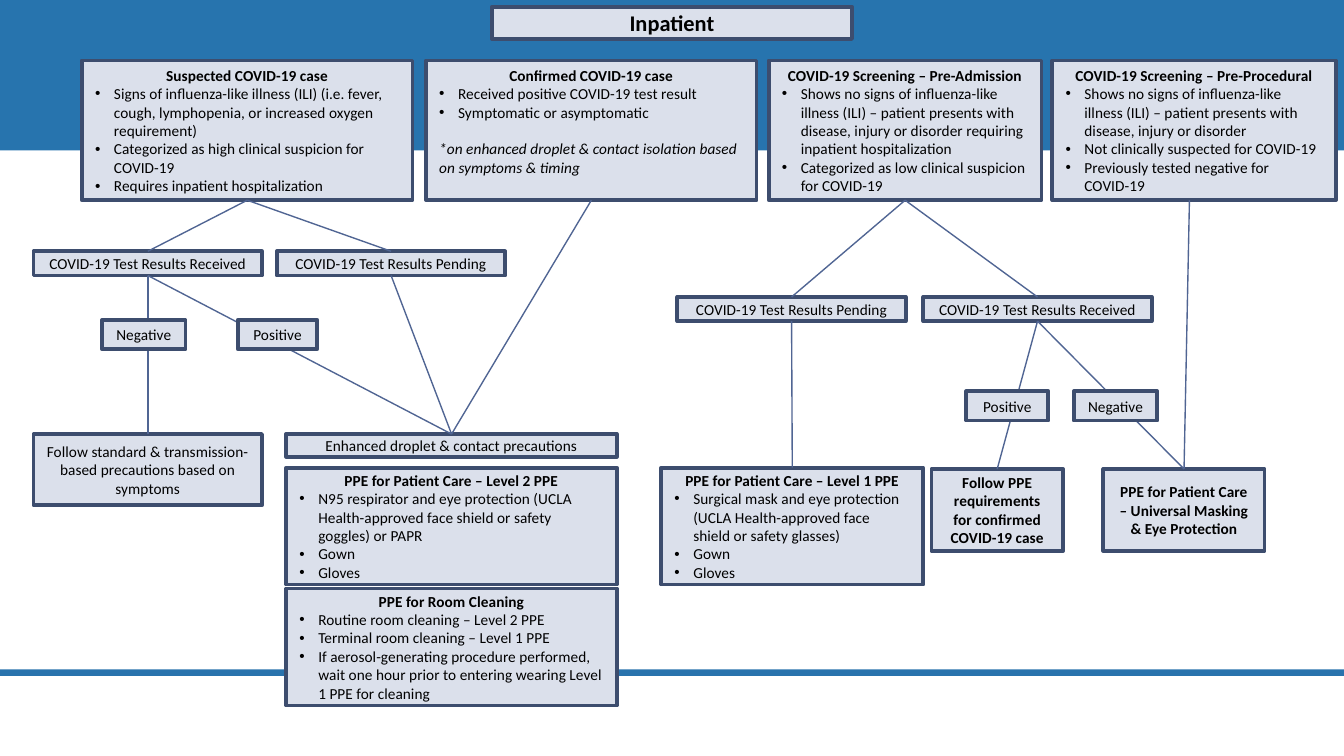
from lxml import etree
from pptx import Presentation
from pptx.dml.color import RGBColor
from pptx.enum.shapes import MSO_CONNECTOR, MSO_SHAPE
from pptx.enum.text import MSO_ANCHOR, MSO_AUTO_SIZE, PP_ALIGN
from pptx.oxml.ns import qn
from pptx.util import Inches, Pt

RECTANGLE = MSO_SHAPE.RECTANGLE
STRAIGHT = MSO_CONNECTOR.STRAIGHT
MIDDLE = MSO_ANCHOR.MIDDLE
NO_AUTOFIT = MSO_AUTO_SIZE.NONE
CENTER, LEFT = PP_ALIGN.CENTER, PP_ALIGN.LEFT

BAND_BLUE = RGBColor(0x27, 0x74, 0xAE)
RULE_BLUE = RGBColor(0x29, 0x73, 0xAD)
BOX_FILL = RGBColor(0xDB, 0xE0, 0xEB)
BOX_LINE = RGBColor(0x3D, 0x4D, 0x6E)
LINK_LINE = RGBColor(0x50, 0x65, 0x93)
BLACK = RGBColor(0, 0, 0)

FONT = "Calibri"
TEXT_SIZE, TITLE_SIZE = 8.25, 12
LINE_HEIGHT = 9.9  # points
WIDTH = 10
HEIGHT = WIDTH * 9 / 16
INDENT = 0.14
TOP_SITE, BOTTOM_SITE = 0, 2  # connection sites of a rectangle

# Grid rows: top, height
CASES = (0.45, 1.04)
LEFT_TESTS, RIGHT_TESTS = (1.87, 0.18), (2.21, 0.18)
LEFT_RESULTS, RIGHT_RESULTS = (2.38, 0.22), (2.91, 0.22)
PRECAUTIONS, STANDARD = (3.23, 0.17), (3.23, 0.53)
CARE, CLEANING = (3.48, 0.87), (4.38, 0.87)
OUTCOMES = (3.49, 0.61)

# Grid columns: left, width
LEFT_RECEIVED, LEFT_PENDING = (0.25, 1.7), (2.06, 1.7)
RIGHT_PENDING, RIGHT_RECEIVED = (5.04, 1.7), (6.87, 1.7)
ENHANCED = (2.13, 2.46)

# Name: column, row, bold heading, bullets
LISTS = {
    "suspected": ((0.61, 2.46), CASES, "Suspected COVID-19 case", [
        "Signs of influenza-like illness (ILI) (i.e. fever, cough, lymphopenia, or increased oxygen requirement)",
        "Categorized as high clinical suspicion for COVID-19",
        "Requires inpatient hospitalization"]),
    "confirmed": ((3.17, 2.46), CASES, "Confirmed COVID-19 case", [
        "Received positive COVID-19 test result",
        "Symptomatic or asymptomatic"]),
    "admission": ((5.72, 2.03), CASES, "COVID-19 Screening – Pre-Admission", [
        "Shows no signs of influenza-like illness (ILI) – patient presents with disease, "
        "injury or disorder requiring inpatient hospitalization",
        "Categorized as low clinical suspicion for COVID-19"]),
    "procedural": ((7.83, 2.11), CASES, "COVID-19 Screening – Pre-Procedural", [
        "Shows no signs of influenza-like illness (ILI) – patient presents with disease, injury or disorder",
        "Not clinically suspected for COVID-19",
        "Previously tested negative for COVID-19"]),
    "level 2": (ENHANCED, CARE, "PPE for Patient Care – Level 2 PPE", [
        "N95 respirator and eye protection (UCLA Health-approved face shield or safety goggles) or PAPR",
        "Gown", "Gloves"]),
    "level 1": ((4.92, 1.95), CARE, "PPE for Patient Care – Level 1 PPE", [
        "Surgical mask and eye protection (UCLA Health-approved face shield or safety glasses)",
        "Gown", "Gloves"]),
    "cleaning": (ENHANCED, CLEANING, "PPE for Room Cleaning", [
        "Routine room cleaning – Level 2 PPE",
        "Terminal room cleaning – Level 1 PPE",
        "If aerosol-generating procedure performed, wait one hour prior to entering "
        "wearing Level 1 PPE for cleaning"]),
}

# Name: column, row, text, bold
LABELS = {
    "left received": (LEFT_RECEIVED, LEFT_TESTS, "COVID-19 Test Results Received", False),
    "left pending": (LEFT_PENDING, LEFT_TESTS, "COVID-19 Test Results Pending", False),
    "right pending": (RIGHT_PENDING, RIGHT_TESTS, "COVID-19 Test Results Pending", False),
    "right received": (RIGHT_RECEIVED, RIGHT_TESTS, "COVID-19 Test Results Received", False),
    "enhanced": (ENHANCED, PRECAUTIONS, "Enhanced droplet & contact precautions", False),
    "standard": (LEFT_RECEIVED, STANDARD,
                 "Follow standard & transmission-based precautions based on symptoms", False),
    "follow": ((6.93, 0.98), OUTCOMES, "Follow PPE requirements for confirmed COVID-19 case", True),
    "universal": ((8.21, 1.2), OUTCOMES,
                  "PPE for Patient Care – Universal Masking & Eye Protection", True),
}

RESULTS = [
    ((0.76, 0.62), LEFT_RESULTS, "Negative"),
    ((1.77, 0.59), LEFT_RESULTS, "Positive"),
    ((7.19, 0.61), RIGHT_RESULTS, "Positive"),
    ((7.99, 0.62), RIGHT_RESULTS, "Negative"),
]

LINKS = [
    ("confirmed", "enhanced"), ("suspected", "left pending"),
    ("left pending", "enhanced"), ("suspected", "left received"),
    ("left received", "enhanced"), ("left received", "standard"),
    ("admission", "right pending"), ("admission", "right received"),
    ("right pending", "level 1"), ("right received", "universal"),
    ("right received", "follow"),
]


def add_band(page, top, height, color):
    band = page.shapes.add_shape(RECTANGLE, 0, Inches(top), Inches(WIDTH), Inches(height))
    band.shadow.inherit = False
    band.fill.solid()
    band.fill.fore_color.rgb = color
    band.line.fill.background()


def style_box(box):
    box.fill.solid()
    box.fill.fore_color.rgb = BOX_FILL
    box.line.color.rgb = BOX_LINE
    box.line.width = Pt(2)
    frame = box.text_frame
    frame.word_wrap = True
    frame.auto_size = NO_AUTOFIT
    frame.vertical_anchor = MIDDLE
    frame.margin_left = frame.margin_right = Inches(0.1)
    frame.margin_top = frame.margin_bottom = 0


def add_box(page, column, row):
    (left, width), (top, height) = column, row
    box = page.shapes.add_shape(RECTANGLE, Inches(left), Inches(top), Inches(width), Inches(height))
    box.shadow.inherit = False
    style_box(box)
    return box


def write(para, text, align=CENTER, size=TEXT_SIZE, bold=False, italic=False):
    para.alignment = align
    span = para.add_run()
    span.text = text
    font = span.font
    font.name, font.size, font.bold, font.italic = FONT, Pt(size), bold, italic
    font.color.rgb = BLACK


def add_bullet(para):
    properties = para._p.get_or_add_pPr()
    properties.set("marL", str(Inches(INDENT)))
    properties.set("indent", str(-Inches(INDENT)))
    etree.SubElement(properties, qn("a:buFont")).set("typeface", "Arial")
    etree.SubElement(properties, qn("a:buChar")).set("char", "•")


def add_label(page, column, row, text, bold=False):
    box = add_box(page, column, row)
    write(box.text_frame.paragraphs[0], text, bold=bold)
    return box


def add_list(page, column, row, heading, bullets):
    box = add_label(page, column, row, heading, bold=True)
    for text in bullets:
        para = box.text_frame.add_paragraph()
        add_bullet(para)
        write(para, text, LEFT)
    return box


def style_link(link):
    link.line.color.rgb = LINK_LINE
    link.line.width = Pt(0.75)
    etree.SubElement(link._element.spPr, qn("a:effectLst"))


def add_title(page, text):
    title = page.shapes.title
    title.left, title.top = Inches(3.66), Inches(0.05)
    title.width, title.height = Inches(2.68), Inches(0.24)
    style_box(title)
    write(title.text_frame.paragraphs[0], text, size=TITLE_SIZE, bold=True)
    title.element.getparent().append(title.element)  # in front of the band


def main():
    deck = Presentation()
    deck.slide_width, deck.slide_height = Inches(WIDTH), Inches(HEIGHT)
    page = deck.slides.add_slide(deck.slide_layouts[5])

    # Background bands and title
    add_band(page, 4.98, 0.05, RULE_BLUE)
    add_band(page, 0, 1.12, BAND_BLUE)
    add_title(page, "Inpatient")

    # Flowchart boxes
    boxes = {name: add_list(page, *parts) for name, parts in LISTS.items()}
    boxes.update({name: add_label(page, *parts) for name, parts in LABELS.items()})

    # Isolation note under the confirmed case
    frame = boxes["confirmed"].text_frame
    frame.margin_bottom = Pt(LINE_HEIGHT)
    note = frame.add_paragraph()
    note.space_before = Pt(LINE_HEIGHT)
    write(note, "*on enhanced droplet & contact isolation based on symptoms & timing", LEFT, italic=True)

    # Links run from the bottom of one box to the top of the next
    for start, end in LINKS:
        link = page.shapes.add_connector(STRAIGHT, 0, 0, 0, 0)
        link.begin_connect(boxes[start], BOTTOM_SITE)
        link.end_connect(boxes[end], TOP_SITE)
        style_link(link)

    # The pre-procedural link starts left of its box's centre
    link = page.shapes.add_connector(STRAIGHT, Inches(8.85), Inches(sum(CASES)), 0, 0)
    link.end_connect(boxes["universal"], TOP_SITE)
    style_link(link)

    # Test results sit on top of the links
    for column, row, text in RESULTS:
        add_label(page, column, row, text)

    deck.save("out.pptx")


if __name__ == "__main__":
    main()
